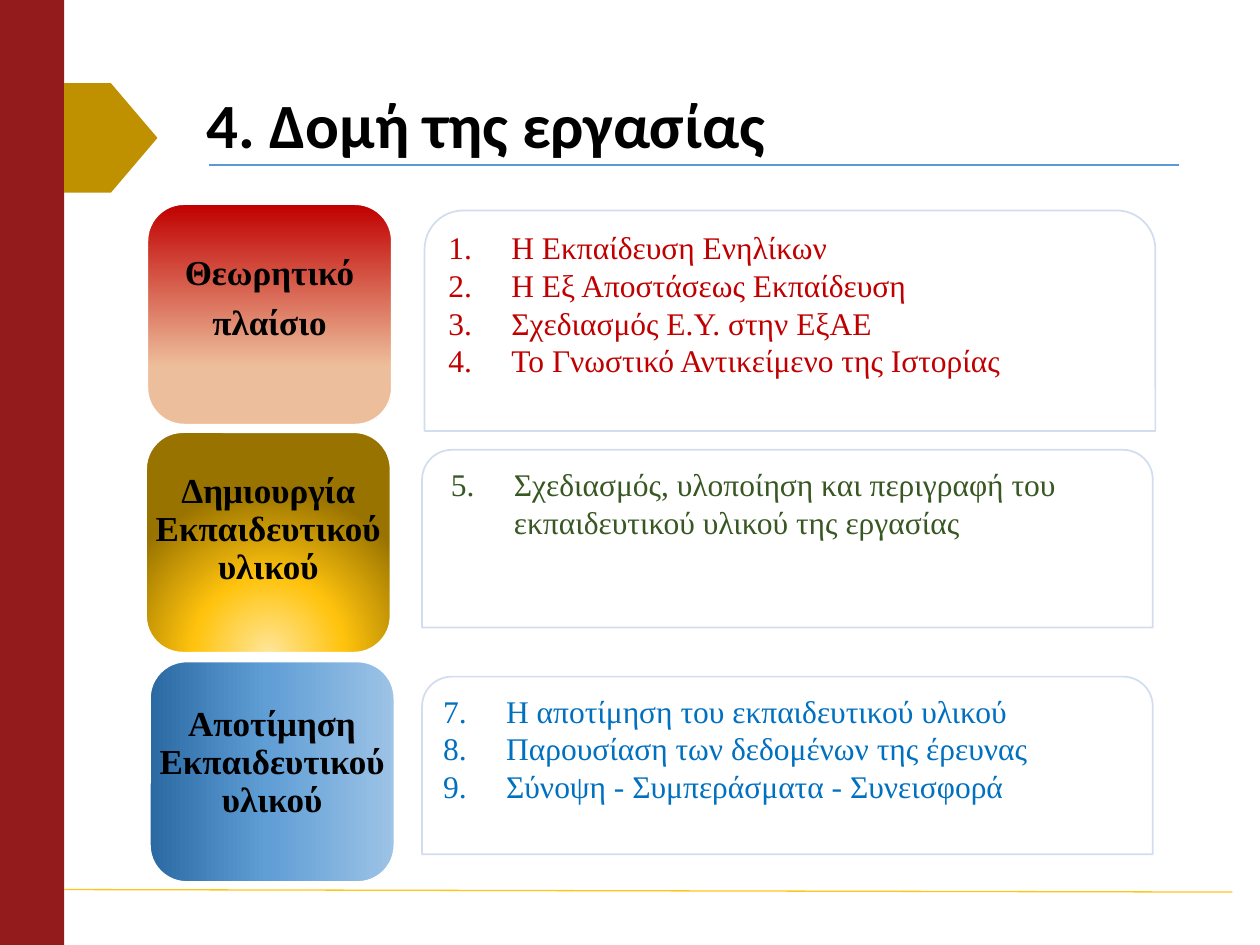
from dataclasses import dataclass

from lxml.etree import SubElement
from pptx import Presentation
from pptx.dml.color import RGBColor
from pptx.enum.shapes import MSO_CONNECTOR, MSO_SHAPE
from pptx.enum.text import MSO_ANCHOR, PP_ALIGN
from pptx.oxml import parse_xml
from pptx.oxml.ns import nsdecls, qn
from pptx.shapes.autoshape import Shape
from pptx.slide import Slide
from pptx.text.text import TextFrame
from pptx.util import Inches, Pt

COLORS = {
    "white": "FFFFFF", "black": "000000", "band": "931B1B", "tab": "BF9000",
    "title_rule": "5B9BD5", "footer_rule": "FFC61A", "panel_line": "D2DEEF",
    "red": "C00000", "green": "385723", "blue": "0070C0",
}
SERIF = "Times New Roman"
CARD_SIZE = (1.94, 1.75)
PANEL_WIDTH = 5.8
NUMBER_INDENT = 0.5

LINEAR_DOWN = '<a:lin ang="5400000" scaled="0"/>'
LINEAR_RIGHT = '<a:lin ang="0" scaled="0"/>'
GLOW_BELOW = ('<a:path path="circle"><a:fillToRect l="50000" t="130000" '
              'r="50000" b="-30000"/></a:path>')


@dataclass
class Card:
    text: str
    left: float
    top: float
    text_top: float
    stops: list[tuple[int, str]]
    direction: str


@dataclass
class Panel:
    items: list[str]
    first_number: int
    color: str
    left: float
    top: float
    height: float
    corner: float = 0.167
    text_left: float = 0.1


CARDS = [
    Card("Θεωρητικό\nπλαίσιο", 1.17, 1.62, 0.32,
         [(0, "C00000"), (74, "EDBE9B"), (100, "EDBE9B")], LINEAR_DOWN),
    Card("Δημιουργία\vΕκπαιδευτικού\vυλικού", 1.16, 3.43, 0.24,
         [(0, "FFE699"), (46, "FFC30D"), (100, "997300")], GLOW_BELOW),
    Card("Αποτίμηση\vΕκπαιδευτικού\vυλικού", 1.19, 5.25, 0.27,
         [(0, "2A69A2"), (48, "609ED6"), (100, "9DC3E6")], LINEAR_RIGHT),
]
PANELS = [
    Panel(["Η Εκπαίδευση Ενηλίκων", "Η Εξ Αποστάσεως Εκπαίδευση",
           "Σχεδιασμός Ε.Υ. στην ΕξΑE",
           "Το Γνωστικό Αντικείμενο της Ιστορίας"],
          1, "red", 3.37, 1.67, 1.75, corner=0.176),
    Panel(["Σχεδιασμός, υλοποίηση και περιγραφή του\v"
           "εκπαιδευτικού υλικού της εργασίας"],
          5, "green", 3.35, 3.57, 1.41, text_left=0.16),
    Panel(["Η αποτίμηση του εκπαιδευτικού υλικού",
           "Παρουσίαση των δεδομένων της έρευνας",
           "Σύνοψη - Συμπεράσματα - Συνεισφορά"],
          7, "blue", 3.35, 5.37, 1.41),
]


def rgb(name: str) -> RGBColor:
    return RGBColor.from_string(COLORS[name])


def add_box(s: Slide, kind: MSO_SHAPE, left: float, top: float, width: float,
            height: float, fill: str, line: str | None = None) -> Shape:
    sp = s.shapes.add_shape(kind, Inches(left), Inches(top),
                            Inches(width), Inches(height))
    sp.shadow.inherit = False
    sp.fill.solid()
    sp.fill.fore_color.rgb = rgb(fill)
    if line:
        sp.line.color.rgb = rgb(line)
        sp.line.width = Pt(1)
    else:
        sp.line.fill.background()
    return sp


def add_rule(s: Slide, x1: float, y1: float, x2: float, y2: float,
             color: str) -> None:
    ln = s.shapes.add_connector(MSO_CONNECTOR.STRAIGHT, Inches(x1), Inches(y1),
                                Inches(x2), Inches(y2))
    ln.line.color.rgb = rgb(color)
    ln.line.width = Pt(0.75)
    SubElement(ln._element.spPr, qn("a:effectLst"))


def format_text(tf: TextFrame, font: str, size: int, color: str,
                bold: bool, align: PP_ALIGN) -> None:
    for p in tf.paragraphs:
        p.alignment = align
        for r in p.runs:
            r.font.name = font
            r.font.size = Pt(size)
            r.font.bold = bold
            r.font.color.rgb = rgb(color)


def set_gradient(sp: Shape, stops: list[tuple[int, str]],
                 direction: str) -> None:
    """Replace the solid fill by a gradient with any number of stops."""
    marks = "".join(f'<a:gs pos="{pos * 1000}"><a:srgbClr val="{color}"/></a:gs>'
                    for pos, color in stops)
    grad = parse_xml(f'<a:gradFill {nsdecls("a")} rotWithShape="1">'
                     f'<a:gsLst>{marks}</a:gsLst>{direction}</a:gradFill>')
    sp_pr = sp._element.spPr
    sp_pr.replace(sp_pr.find(qn("a:solidFill")), grad)


def add_title(s: Slide, text: str) -> None:
    tb = s.shapes.add_textbox(Inches(1.54), Inches(0.6),
                              Inches(7.87), Inches(0.84))
    tf = tb.text_frame
    tf.word_wrap = True
    tf.vertical_anchor = MSO_ANCHOR.MIDDLE
    tf.text = text
    tf.paragraphs[0].line_spacing = 0.9
    format_text(tf, "Calibri", 36, "black", True, PP_ALIGN.LEFT)


def add_card(s: Slide, card: Card) -> None:
    sp = add_box(s, MSO_SHAPE.FLOWCHART_ALTERNATE_PROCESS, card.left, card.top,
                 *CARD_SIZE, "white", "white")
    set_gradient(sp, card.stops, card.direction)
    tf = sp.text_frame
    tf.word_wrap = False
    tf.vertical_anchor = MSO_ANCHOR.TOP
    tf.margin_left = tf.margin_right = tf.margin_bottom = 0
    tf.margin_top = Inches(card.text_top)
    tf.text = card.text
    for p in tf.paragraphs:
        p.line_spacing = 0.9
        p.space_after = Pt(7)
    format_text(tf, SERIF, 20, "black", True, PP_ALIGN.CENTER)


def add_panel(s: Slide, panel: Panel) -> None:
    sp = add_box(s, MSO_SHAPE.ROUND_2_SAME_RECTANGLE, panel.left, panel.top,
                 PANEL_WIDTH, panel.height, "white", "panel_line")
    sp.adjustments[0] = panel.corner
    tf = sp.text_frame
    tf.word_wrap = True
    tf.vertical_anchor = MSO_ANCHOR.TOP
    tf.margin_left = Inches(panel.text_left)
    tf.text = "\n".join(panel.items)
    format_text(tf, SERIF, 18, panel.color, False, PP_ALIGN.LEFT)
    for p in tf.paragraphs:
        p_pr = p._p.get_or_add_pPr()
        p_pr.set("marL", str(Inches(NUMBER_INDENT)))
        p_pr.set("indent", str(-Inches(NUMBER_INDENT)))
        SubElement(p_pr, qn("a:buFont"), typeface="+mj-lt")
        SubElement(p_pr, qn("a:buAutoNum"), type="arabicPeriod",
                   startAt=str(panel.first_number))


def main() -> None:
    prs = Presentation()
    prs.slide_width, prs.slide_height = Inches(10), Inches(7.5)
    s = prs.slides.add_slide(prs.slide_layouts[6])
    add_box(s, MSO_SHAPE.RECTANGLE, 0, 0, 0.51, 7.5, "band")
    add_rule(s, 1.66, 1.31, 9.36, 1.31, "title_rule")
    add_rule(s, 0.51, 7.06, 9.78, 7.08, "footer_rule")
    add_box(s, MSO_SHAPE.PENTAGON, 0.51, 0.66, 0.74, 0.87, "tab")
    add_title(s, "4. Δομή της εργασίας")
    for card in CARDS:
        add_card(s, card)
    for panel in PANELS:
        add_panel(s, panel)
    prs.save("out.pptx")


if __name__ == "__main__":
    main()
